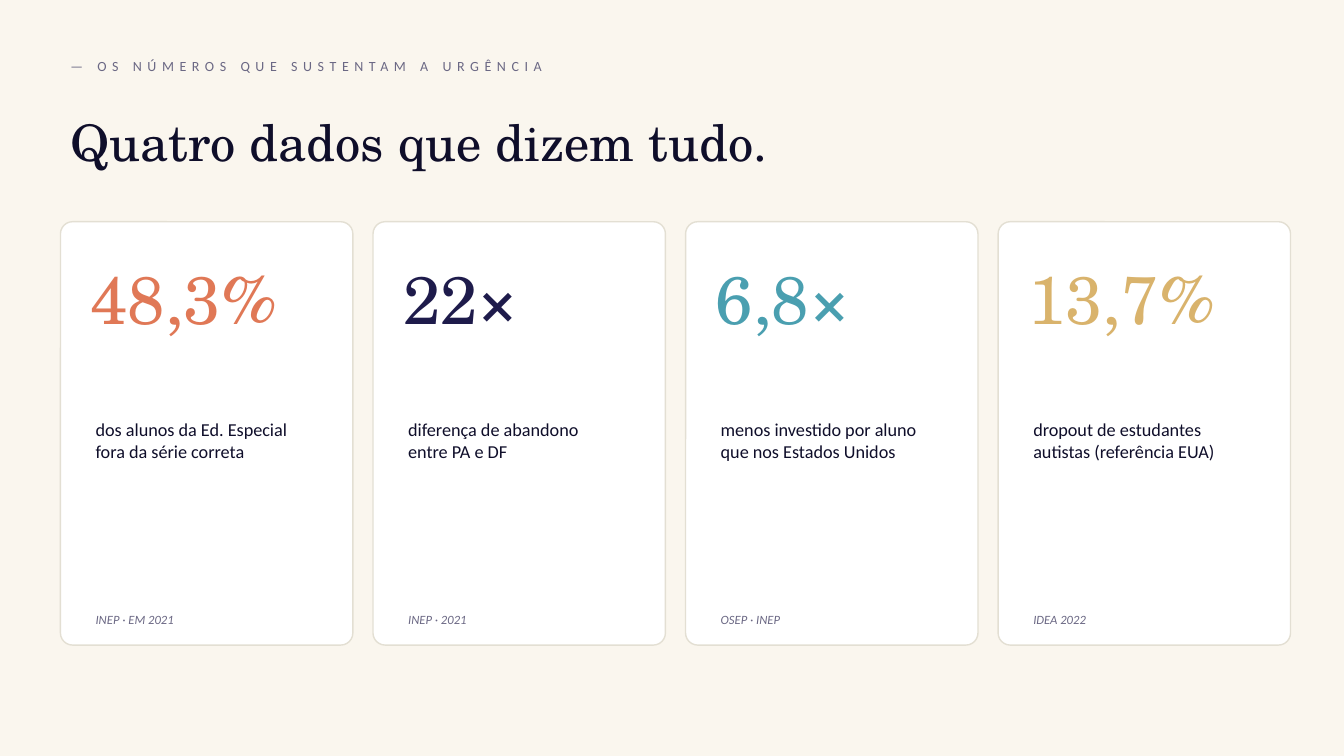
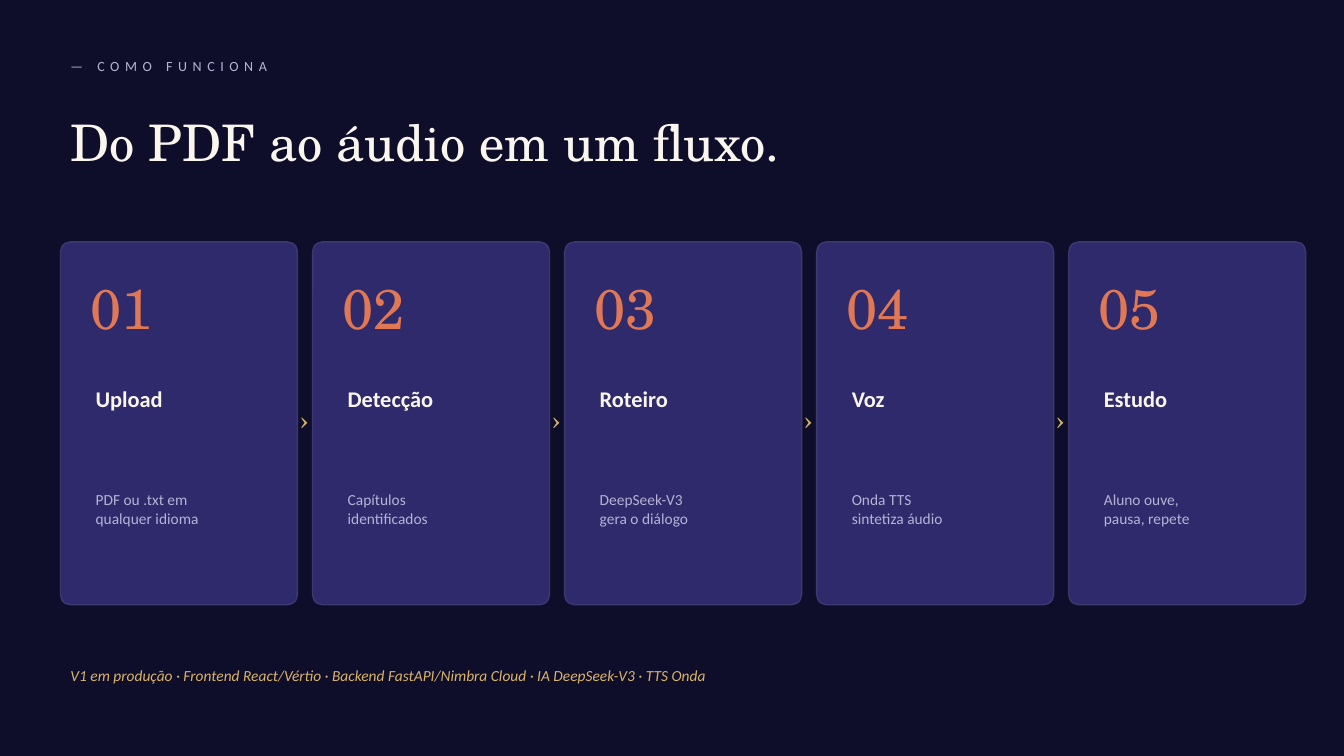
from dataclasses import dataclass

from pptx import Presentation
from pptx.dml.color import RGBColor
from pptx.enum.shapes import MSO_SHAPE
from pptx.enum.text import MSO_ANCHOR, PP_ALIGN
from pptx.util import Inches, Pt


@dataclass(frozen=True)
class Theme:
    serif: str = "TeX Gyre Schola"
    sans: str = "Calibri"

    cream: str = "FAF6EE"
    ink: str = "0F0E2A"
    white: str = "FFFFFF"
    card_edge: str = "E3DFD3"
    muted: str = "6B6884"
    lilac: str = "B6B3D6"
    indigo: str = "1E1B4B"
    violet: str = "2E2A6B"
    violet_edge: str = "3D3970"
    coral: str = "E07856"
    teal: str = "4A9FB0"
    gold: str = "D9B36C"

    stat: int = 48
    number: int = 40
    title: int = 36
    chevron: int = 24
    step: int = 16
    body: int = 13
    small: int = 11
    eyebrow: int = 10
    source: int = 9


T = Theme()
MARGIN = 0.6
WIDTH = 12

STATS = [
    ("48,3%", T.coral, "dos alunos da Ed. Especial\nfora da série correta", "INEP · EM 2021"),
    ("22×", T.indigo, "diferença de abandono\nentre PA e DF", "INEP · 2021"),
    ("6,8×", T.teal, "menos investido por aluno\nque nos Estados Unidos", "OSEP · INEP"),
    ("13,7%", T.gold, "dropout de estudantes\nautistas (referência EUA)", "IDEA 2022"),
]
STEPS = [
    ("Upload", "PDF ou .txt em\nqualquer idioma"),
    ("Detecção", "Capítulos\nidentificados"),
    ("Roteiro", "DeepSeek-V3\ngera o diálogo"),
    ("Voz", "Onda TTS\nsintetiza áudio"),
    ("Estudo", "Aluno ouve,\npausa, repete"),
]
STACK = ("V1 em produção · Frontend React/Vértio · Backend FastAPI/Nimbra Cloud"
         " · IA DeepSeek-V3 · TTS Onda")


def rgb(color):
    return RGBColor.from_string(color)


def add_text(s, text, x, y, w, h, *, size, color, font=T.sans, bold=False, italic=False,
             align=PP_ALIGN.LEFT, anchor=MSO_ANCHOR.MIDDLE, spacing=None):
    """Add a text box with one paragraph per line; spacing is letter spacing in points."""
    tf = s.shapes.add_textbox(Inches(x), Inches(y), Inches(w), Inches(h)).text_frame
    tf.word_wrap = True
    tf.vertical_anchor = anchor
    for i, line in enumerate(text.split("\n")):
        p = tf.add_paragraph() if i else tf.paragraphs[0]
        p.alignment = align
        r = p.add_run()
        r.text = line
        r.font.name = font
        r.font.size = Pt(size)
        r.font.color.rgb = rgb(color)
        r.font.bold = bold
        r.font.italic = italic
        if spacing:
            r.font._element.set("spc", str(spacing * 100))


def add_card(s, x, y, w, h, *, fill, edge, radius):
    sp = s.shapes.add_shape(MSO_SHAPE.ROUNDED_RECTANGLE,
                            Inches(x), Inches(y), Inches(w), Inches(h))
    sp.adjustments[0] = radius / min(w, h)
    sp.shadow.inherit = False
    sp.fill.solid()
    sp.fill.fore_color.rgb = rgb(fill)
    sp.line.color.rgb = rgb(edge)
    sp.line.width = Pt(1)


def add_slide(prs, eyebrow, title, *, background, eyebrow_color, title_color):
    """Add a slide with the shared background, eyebrow line and title."""
    s = prs.slides.add_slide(prs.slide_layouts[6])
    s.background.fill.solid()
    s.background.fill.fore_color.rgb = rgb(background)
    add_text(s, eyebrow, MARGIN, 0.5, WIDTH, 0.3,
             size=T.eyebrow, color=eyebrow_color, spacing=4)
    add_text(s, title, MARGIN, 0.95, WIDTH, 0.9,
             size=T.title, color=title_color, font=T.serif)
    return s


def add_stat_card(s, x, y, w, h, value, color, label, source):
    add_card(s, x, y, w, h, fill=T.white, edge=T.card_edge, radius=0.12)
    add_text(s, value, x + 0.2, y + 0.3, w - 0.2, 1.4,
             size=T.stat, color=color, font=T.serif, anchor=MSO_ANCHOR.TOP)
    add_text(s, label, x + 0.25, y + 1.9, w - 0.4, 1.8,
             size=T.body, color=T.ink, anchor=MSO_ANCHOR.TOP)
    add_text(s, source, x + 0.25, y + h - 0.4, w - 0.4, 0.3,
             size=T.source, color=T.muted, italic=True)


def add_step_card(s, x, y, w, h, number, name, detail):
    add_card(s, x, y, w, h, fill=T.violet, edge=T.violet_edge, radius=0.1)
    inner = w - 0.35
    add_text(s, f"{number:02}", x + 0.2, y + 0.15, inner, 1,
             size=T.number, color=T.coral, font=T.serif)
    add_text(s, name, x + 0.25, y + 1.3, inner, 0.5,
             size=T.step, color=T.cream, bold=True)
    add_text(s, detail, x + 0.25, y + 1.9, inner, 1.5,
             size=T.small, color=T.lilac)


def add_chevron(s, center, y):
    w = 0.4
    add_text(s, "›", center - w / 2, y, w, 0.5, size=T.chevron, color=T.gold,
             font=T.serif, align=PP_ALIGN.CENTER)


def build_stats(prs):
    s = add_slide(prs, "— OS NÚMEROS QUE SUSTENTAM A URGÊNCIA", "Quatro dados que dizem tudo.",
                  background=T.cream, eyebrow_color=T.muted, title_color=T.ink)
    w, gap = 2.9, 0.2
    for i, stat in enumerate(STATS):
        add_stat_card(s, MARGIN + i * (w + gap), 2.2, w, 4.2, *stat)


def build_steps(prs):
    s = add_slide(prs, "— COMO FUNCIONA", "Do PDF ao áudio em um fluxo.",
                  background=T.ink, eyebrow_color=T.lilac, title_color=T.cream)
    w, gap, y = 2.35, 0.15, 2.4
    lefts = [MARGIN + i * (w + gap) for i in range(len(STEPS))]
    for i, (x, step) in enumerate(zip(lefts, STEPS)):
        add_step_card(s, x, y, w, 3.6, i + 1, *step)
    for x in lefts[1:]:
        add_chevron(s, x - gap / 2, y + 1.5)
    add_text(s, STACK, MARGIN, 6.5, WIDTH, 0.4, size=T.small, color=T.gold, italic=True)


def main():
    prs = Presentation()
    prs.slide_width = Inches(13.33)
    prs.slide_height = Inches(7.5)
    build_stats(prs)
    build_steps(prs)
    prs.save("out.pptx")


if __name__ == "__main__":
    main()
